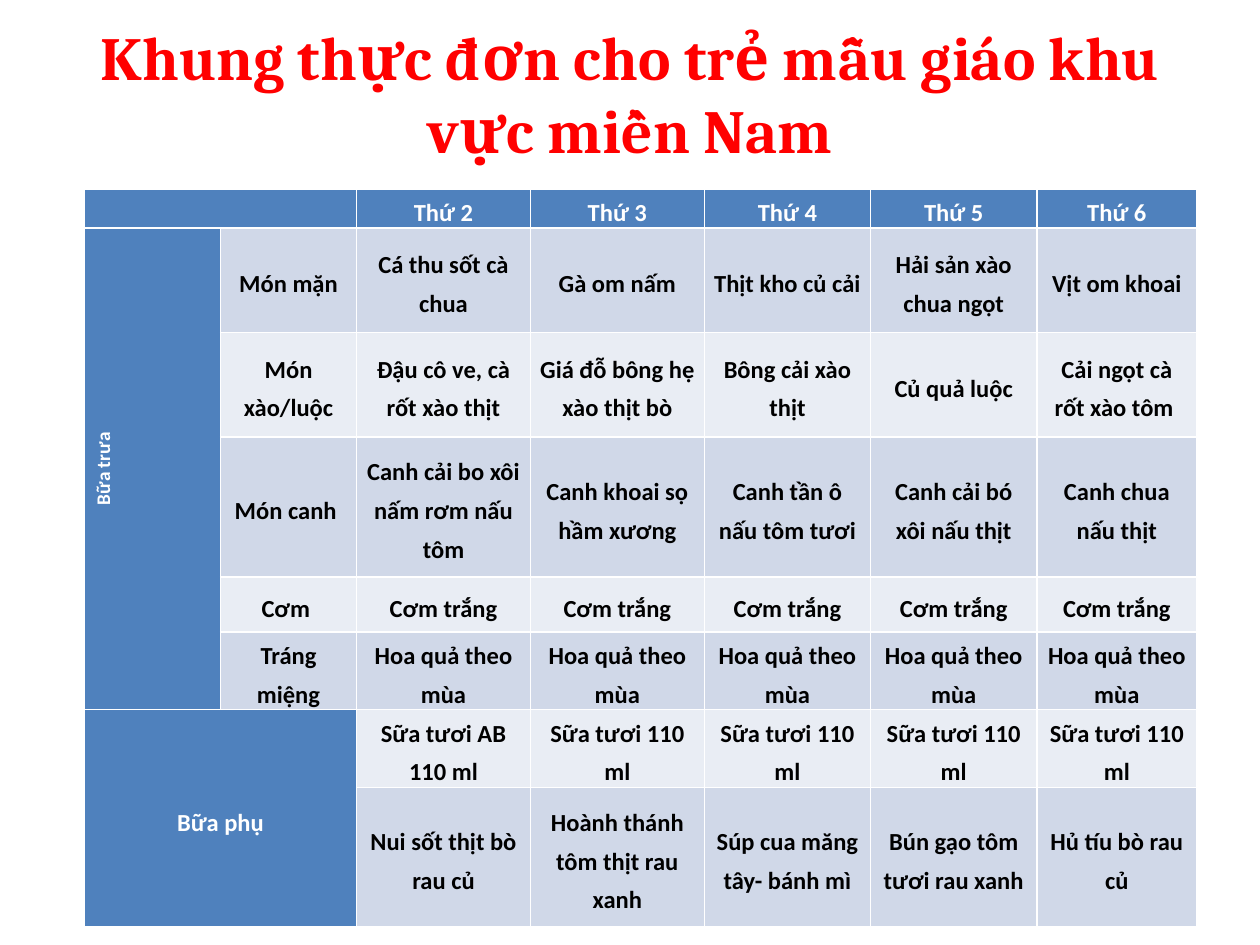
from pptx import Presentation
from pptx.dml.color import RGBColor
from pptx.enum import text
from pptx.util import Inches, Pt

RED = RGBColor(0xFF, 0x00, 0x00)
WHITE = RGBColor(0xFF, 0xFF, 0xFF)
BLACK = RGBColor(0x00, 0x00, 0x00)
BLUE = RGBColor(0x4F, 0x81, 0xBD)
BANDS = (RGBColor(0xE9, 0xED, 0xF4), RGBColor(0xD0, 0xD8, 0xE8))

COLUMN_WIDTHS = (1.08, 1.08, 1.38, 1.38, 1.32, 1.32, 1.27)
ROW_HEIGHTS = (0.28, 0.83, 0.83, 1.11, 0.44, 0.55, 0.55, 1.11)
DAYS = 5
MILK = "Sữa tươi 110 ml"
MENU = [
    ["", ""] + [f"Thứ {day}" for day in range(2, 2 + DAYS)],
    ["Bữa trưa", "Món mặn", "Cá thu sốt cà chua", "Gà om nấm",
     "Thịt kho củ cải", "Hải sản xào chua ngọt", "Vịt om khoai"],
    ["", "Món xào/luộc", "Đậu cô ve, cà rốt xào thịt", "Giá đỗ bông hẹ xào thịt bò",
     "Bông cải xào thịt", "Củ quả luộc", "Cải ngọt cà rốt xào tôm "],
    ["", "Món canh ", "Canh cải bo xôi nấm rơm nấu tôm", "Canh khoai sọ hầm xương",
     "Canh tần ô nấu tôm tươi", "Canh cải bó xôi nấu thịt", "Canh chua nấu thịt"],
    ["", "Cơm "] + ["Cơm trắng"] * DAYS,
    ["", "Tráng miệng"] + ["Hoa quả theo mùa"] * DAYS,
    ["Bữa phụ", "", "Sữa tươi AB 110 ml"] + [MILK] * (DAYS - 1),
    ["", "", "Nui sốt thịt bò rau củ", "Hoành thánh tôm thịt rau xanh",
     "Súp cua măng tây- bánh mì", "Bún gạo tôm tươi rau xanh", "Hủ tíu bò rau củ"],
]
# First and last cell of each merged heading, as (row, column)
MERGES = (((0, 0), (0, 1)), ((1, 0), (5, 0)), ((6, 0), (7, 1)))


def set_font(paragraph, name, size, color):
    paragraph.alignment = text.PP_ALIGN.CENTER
    font = paragraph.font
    font.name, font.size, font.bold = name, Pt(size), True
    font.color.rgb = color


def place_title(slide, left, top, width, height):
    title = slide.shapes.title
    title.left, title.top, title.width, title.height = left, top, width, height
    title.text_frame.text = "Khung thực đơn cho trẻ mẫu giáo khu vực miền Nam"
    title.text_frame.vertical_anchor = text.MSO_ANCHOR.MIDDLE
    set_font(title.text_frame.paragraphs[0], "Cambria", 35, RED)


def fill_cell(cell, words, fill, color, size=14):
    cell.text = words
    cell.fill.solid()
    cell.fill.fore_color.rgb = fill
    cell.vertical_anchor = text.MSO_ANCHOR.MIDDLE
    cell.margin_left = cell.margin_right = Inches(0.06)
    cell.margin_top = cell.margin_bottom = 0
    paragraph = cell.text_frame.paragraphs[0]
    set_font(paragraph, "Calibri", size, color)
    paragraph.line_spacing = 1.3
    paragraph.space_before = paragraph.space_after = Pt(4.8)


def place_menu(slide, left, top, width, height):
    table = slide.shapes.add_table(
        len(ROW_HEIGHTS), len(COLUMN_WIDTHS), left, top, width, height).table
    table.first_col = True
    for column, column_width in zip(table.columns, COLUMN_WIDTHS):
        column.width = Inches(column_width)
    for row, row_height in zip(table.rows, ROW_HEIGHTS):
        row.height = Inches(row_height)

    # Headings are blue, dishes alternate between the two bands
    for r, words_in_row in enumerate(MENU):
        for c, words in enumerate(words_in_row):
            heading = r == 0 or c == 0
            fill_cell(table.cell(r, c), words,
                      BLUE if heading else BANDS[r % 2],
                      WHITE if heading else BLACK)
    for first, last in MERGES:
        table.cell(*first).merge(table.cell(*last))

    # The lunch heading is smaller and reads upwards
    lunch = table.cell(1, 0)
    lunch.text_frame.paragraphs[0].font.size = Pt(11)
    lunch._tc.get_or_add_tcPr().set("vert", "vert270")


def main():
    presentation = Presentation()
    presentation.slide_width, presentation.slide_height = Inches(10), Inches(7.5)
    slide = presentation.slides.add_slide(presentation.slide_layouts[5])
    place_title(slide, Inches(0.5), Inches(0.3), Inches(9), Inches(0.87))
    place_menu(slide, Inches(0.67), Inches(1.5), Inches(8.83), Inches(5.7))
    presentation.save("out.pptx")


if __name__ == "__main__":
    main()
